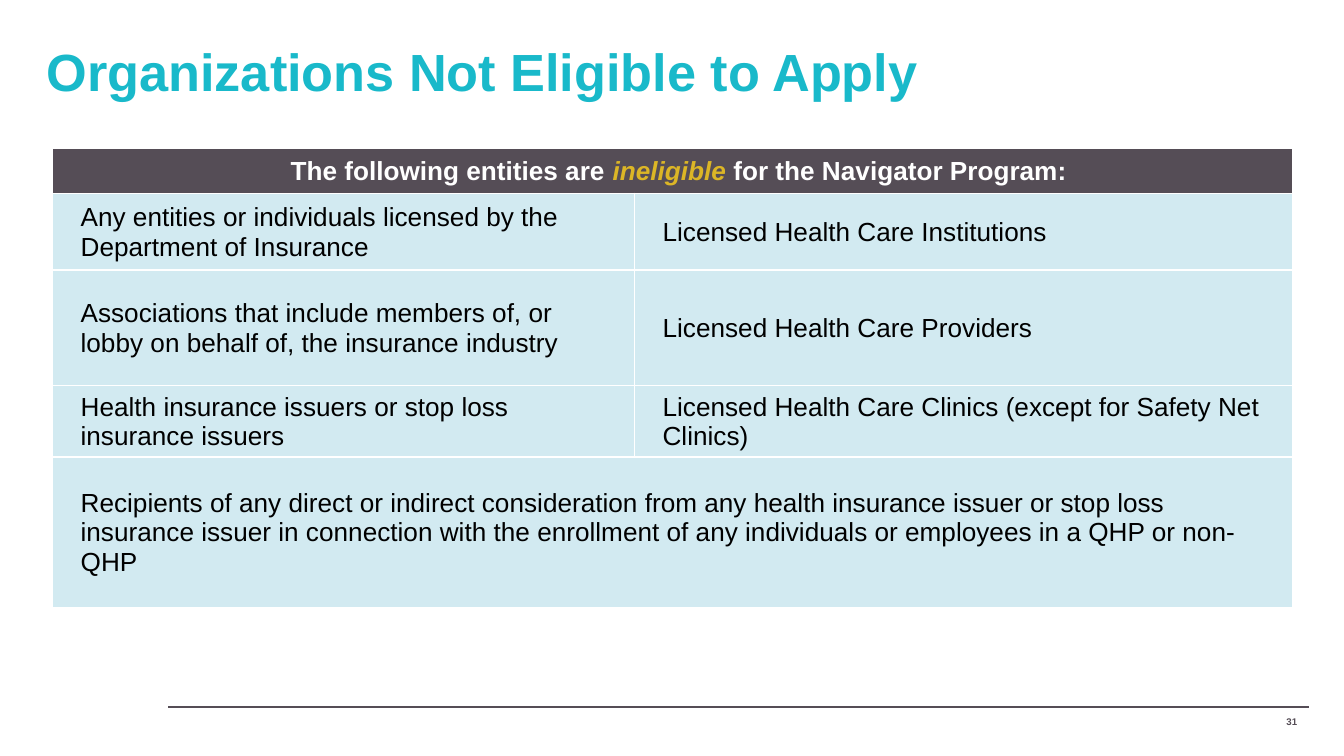
from typing import NamedTuple

from lxml import etree
from pptx import Presentation
from pptx.dml.color import RGBColor
from pptx.enum.shapes import MSO_CONNECTOR
from pptx.enum.text import MSO_ANCHOR, PP_ALIGN
from pptx.oxml.ns import qn
from pptx.util import Inches, Pt

LEFT, CENTER, RIGHT = PP_ALIGN.LEFT, PP_ALIGN.CENTER, PP_ALIGN.RIGHT
MIDDLE = MSO_ANCHOR.MIDDLE
STRAIGHT = MSO_CONNECTOR.STRAIGHT

WHITE = RGBColor(0xFF, 0xFF, 0xFF)
BLACK = RGBColor(0x00, 0x00, 0x00)
TEAL = RGBColor(0x19, 0xB9, 0xCA)
PLUM = RGBColor(0x55, 0x4D, 0x56)
GOLD = RGBColor(0xDC, 0xB6, 0x26)
PALE_BLUE = RGBColor(0xD2, 0xEA, 0xF1)

FONT = "Arial"
PAGE_WIDTH = Inches(10)
PAGE_HEIGHT = PAGE_WIDTH * 9 // 16
COLUMN_WIDTHS = (4.33, 4.9)


class Span(NamedTuple):
    text: str
    color: RGBColor
    bold: bool = False
    italic: bool = False


class Row(NamedTuple):
    height: float
    cells: tuple[tuple[Span, ...], ...]  # a single cell fills the whole row
    fill: RGBColor = PALE_BLUE
    align: PP_ALIGN = LEFT
    indent: float = 0.2


def entry(text: str) -> tuple[Span, ...]:
    return (Span(text, BLACK),)


ROWS = (
    Row(0.34, ((Span("The following entities are ", WHITE, True),
                Span("ineligible ", GOLD, True, True),
                Span("for the Navigator Program:", WHITE, True)),),
        fill=PLUM, align=CENTER, indent=0.25),
    Row(0.57, (entry("Any entities or individuals licensed by the Department of Insurance"),
               entry("Licensed Health Care Institutions"))),
    Row(0.86, (entry("Associations that include members of, or lobby on behalf of, "
                     "the insurance industry"),
               entry("Licensed Health Care Providers"))),
    Row(0.53, (entry("Health insurance issuers or stop loss insurance issuers"),
               entry("Licensed Health Care Clinics (except for Safety Net Clinics)"))),
    Row(1.12, (entry("Recipients of any direct or indirect consideration from any health "
                     "insurance issuer or stop loss insurance issuer in connection with the "
                     "enrollment of any individuals or employees in a QHP or non-QHP"),)),
)


def write_spans(para, spans: tuple[Span, ...], *, size: float, align: PP_ALIGN = LEFT) -> None:
    para.alignment = align
    for span in spans:
        run = para.add_run()
        run.text = span.text
        run.font.name = FONT
        run.font.size = Pt(size)
        run.font.bold = span.bold
        run.font.italic = span.italic
        run.font.color.rgb = span.color


def add_text(page, text: str, *, left: float, top: float, width: float, height: float,
             size: float, color: RGBColor, align: PP_ALIGN = LEFT,
             line_spacing: float = 1.0, bottom_margin: float = 0.05) -> None:
    box = page.shapes.add_textbox(Inches(left), Inches(top), Inches(width), Inches(height))
    frame = box.text_frame
    frame.word_wrap = True
    frame.vertical_anchor = MIDDLE
    frame.margin_bottom = Inches(bottom_margin)
    para = frame.paragraphs[0]
    para.line_spacing = line_spacing
    write_spans(para, (Span(text, color, True),), size=size, align=align)


def set_borders(cell) -> None:
    properties = cell._tc.get_or_add_tcPr()
    for side in "LRTB":
        line = etree.SubElement(properties, qn(f"a:ln{side}"), w=str(Pt(1)))
        fill = etree.SubElement(line, qn("a:solidFill"))
        etree.SubElement(fill, qn("a:srgbClr"), val=str(WHITE))


def format_cell(cell, row: Row) -> None:
    set_borders(cell)
    cell.fill.solid()
    cell.fill.fore_color.rgb = row.fill
    cell.vertical_anchor = MIDDLE
    cell.margin_left = cell.margin_top = Inches(0.01)
    cell.margin_right = Inches(0.17)
    cell.margin_bottom = 0


def add_entity_table(page, rows: tuple[Row, ...], *, left: float, top: float) -> None:
    table = page.shapes.add_table(
        len(rows), len(COLUMN_WIDTHS), Inches(left), Inches(top),
        Inches(sum(COLUMN_WIDTHS)), Inches(sum(row.height for row in rows))).table
    for column, width in zip(table.columns, COLUMN_WIDTHS):
        column.width = Inches(width)
    for index, row in enumerate(rows):
        table.rows[index].height = Inches(row.height)
        cells = [table.cell(index, column) for column in range(len(COLUMN_WIDTHS))]
        for cell in cells:
            format_cell(cell, row)
        if len(row.cells) == 1:
            cells[0].merge(cells[-1])
        for cell, spans in zip(cells, row.cells):
            para = cell.text_frame.paragraphs[0]
            indent = para._p.get_or_add_pPr()
            indent.set("marL", str(Inches(row.indent)))
            indent.set("indent", "0")
            write_spans(para, spans, size=14, align=row.align)


def add_rule(page, *, left: float, right: float, top: float) -> None:
    rule = page.shapes.add_connector(
        STRAIGHT, Inches(left), Inches(top), Inches(right), Inches(top))
    rule.line.color.rgb = PLUM
    rule.line.width = Pt(0.75)
    etree.SubElement(rule._element.spPr, qn("a:effectLst"))


def main() -> None:
    deck = Presentation()
    deck.slide_width, deck.slide_height = PAGE_WIDTH, PAGE_HEIGHT
    page = deck.slides.add_slide(deck.slide_layouts[6])

    # Footer rule
    add_rule(page, left=1.25, right=9.74, top=5.26)

    # Title
    add_text(page, "Organizations Not Eligible to Apply", left=0.25, top=0.24,
             width=9.5, height=0.69, size=28, color=TEAL,
             line_spacing=0.9, bottom_margin=0.11)

    # Ineligible entities
    add_entity_table(page, ROWS, left=0.39, top=1.1)

    # Page number
    add_text(page, "31", left=8.95, top=5.22, width=0.8, height=0.3,
             size=5.2, color=PLUM, align=RIGHT)

    deck.save("out.pptx")


if __name__ == "__main__":
    main()
